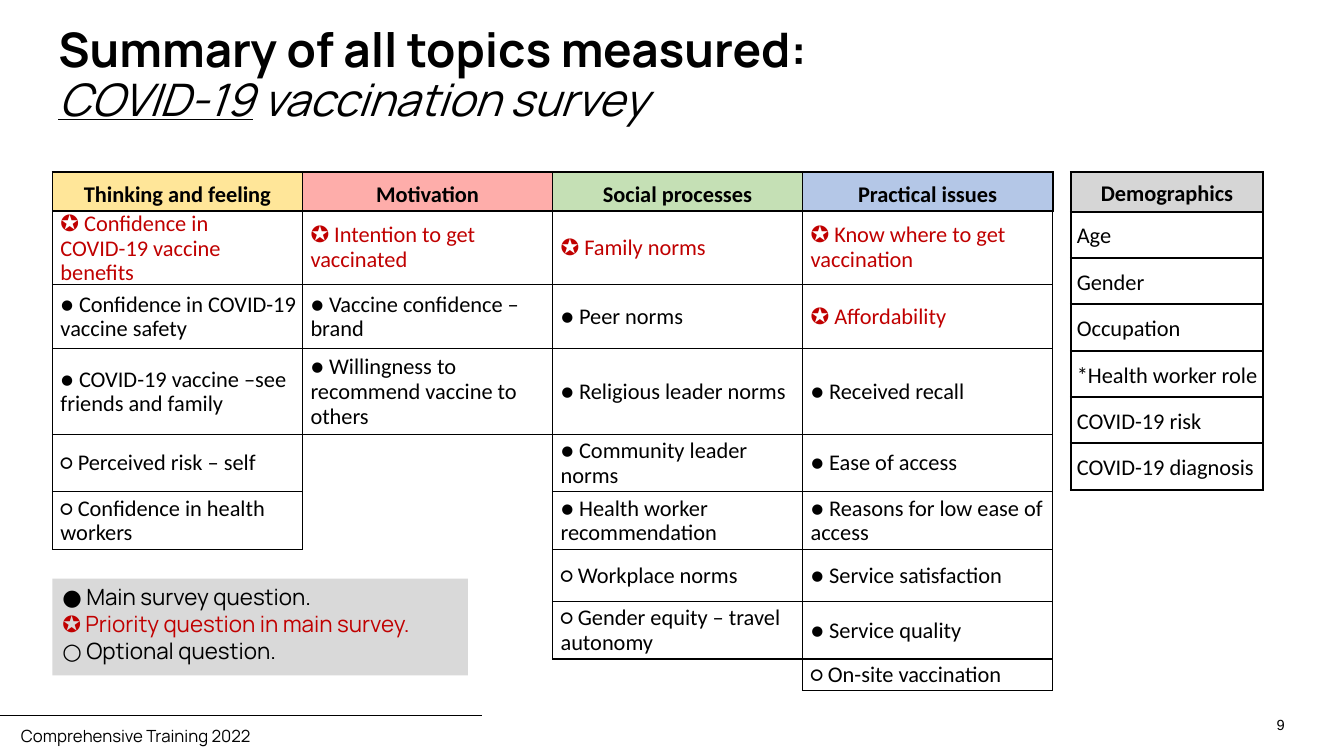
from lxml import etree
from pptx import Presentation
from pptx.dml.color import RGBColor
from pptx.enum import shapes, text
from pptx.oxml import ns
from pptx.util import Inches, Pt

BLACK, RED = "000000", "C00000"
CENTER = {"alignment": text.PP_ALIGN.CENTER, "line_spacing": 1.07}

TOPICS = {
    "Thinking and feeling": ("FFE699", [
        "✪ Confidence in COVID-19 vaccine benefits",
        "● Confidence in COVID-19 vaccine safety",
        "● COVID-19 vaccine –see friends and family",
        "○ Perceived risk – self",
        "○ Confidence in health workers"]),
    "Motivation": ("FEADAA", [
        "✪ Intention to get vaccinated",
        "● Vaccine confidence – brand",
        "● Willingness to recommend vaccine to others"]),
    "Social processes": ("C5E0B5", [
        "✪ Family norms",
        "● Peer norms",
        "● Religious leader norms",
        "● Community leader norms",
        "● Health worker recommendation",
        "○ Workplace norms",
        "○ Gender equity – travel autonomy"]),
    "Practical issues": ("B4C7E7", [
        "✪ Know where to get vaccination",
        "✪ Affordability",
        "● Received recall",
        "● Ease of access",
        "● Reasons for low ease of access",
        "● Service satisfaction",
        "● Service quality",
        "○ On-site vaccination"]),
}
DEMOGRAPHICS = {
    "Demographics": ("D6D6D6", [
        "Age", "Gender", "Occupation", "*Health worker role",
        "COVID-19 risk", "COVID-19 diagnosis"]),
}
LEGEND = ["● Main survey question.", "✪ Priority question in main survey.",
          "○ Optional question."]


def rgb(color):
    return RGBColor.from_string(color)


def apply(obj, values):
    for name, value in values.items():
        setattr(obj, name, value)


def mark_color(label):
    return RED if label.startswith("✪") else BLACK


def write(tf, runs, frame=None, para=None):
    apply(tf, {"word_wrap": True, **(frame or {})})
    p = tf.paragraphs[0]
    apply(p, {"alignment": text.PP_ALIGN.LEFT, **(para or {})})
    for i, (label, color, font) in enumerate(runs):
        if i and font.pop("new_line", False):
            p.add_line_break()
        r = p.add_run()
        r.text = label
        apply(r.font, font)
        r.font.color.rgb = rgb(color)
    return p


def add_text(s, box, runs, frame=None, para=None):
    sp = s.shapes.add_textbox(*map(Inches, box))
    write(sp.text_frame, runs, frame, para)


def add_legend(s, box):
    sp = s.shapes.add_shape(shapes.MSO_SHAPE.RECTANGLE, *map(Inches, box))
    sp.shadow.inherit = False
    sp.fill.solid()
    sp.fill.fore_color.rgb = rgb("D9D9D9")
    sp.line.fill.background()
    runs = [(label, mark_color(label),
             {"name": "Manrope", "size": Pt(16), "new_line": True})
            for label in LEGEND]
    write(sp.text_frame, runs, {"vertical_anchor": text.MSO_ANCHOR.TOP},
          {"space_after": Pt(12)})


def add_rule(s, x1, x2, y):
    line = s.shapes.add_connector(shapes.MSO_CONNECTOR.STRAIGHT,
                                  Inches(x1), Inches(y), Inches(x2), Inches(y))
    line.line.width = Pt(0.5)
    line.line.color.rgb = rgb(BLACK)
    etree.SubElement(line._element.spPr, ns.qn("a:effectLst"))


def set_border(cell, side, width):
    ln = etree.SubElement(cell._tc.get_or_add_tcPr(), ns.qn("a:ln" + side),
                          w=str(Pt(width)))
    if width:
        fill = etree.SubElement(ln, ns.qn("a:solidFill"))
        etree.SubElement(fill, ns.qn("a:srgbClr"), val=BLACK)
    else:
        etree.SubElement(ln, ns.qn("a:noFill"))


def add_table(s, x, y, width, heights, columns, margin, line, body):
    n_rows, n_cols = len(heights), len(columns)
    sp = s.shapes.add_table(n_rows, n_cols, Inches(x), Inches(y),
                            Inches(width * n_cols), Inches(sum(heights)))
    table = sp.table
    apply(table, {"first_row": False, "horz_banding": False})
    for row, height in zip(table.rows, heights):
        row.height = Inches(height)
    for col in table.columns:
        col.width = Inches(width)
    grid = [[head, *items] for head, (_, items) in columns.items()]
    fills = [fill for fill, _ in columns.values()]

    def weight(r, c):
        if not 0 <= c < n_cols or not 0 <= r < len(grid[c]):
            return 0
        return line if r else 1.5

    for c, labels in enumerate(grid):
        for r in range(n_rows):
            cell = table.cell(r, c)
            apply(cell, {"margin_left": Inches(margin),
                         "margin_right": Inches(margin),
                         "margin_top": Inches(0.01 if r else margin),
                         "margin_bottom": 0,
                         "vertical_anchor": text.MSO_ANCHOR.MIDDLE})
            for side, dr, dc in (("L", 0, -1), ("R", 0, 1),
                                 ("T", -1, 0), ("B", 1, 0)):
                set_border(cell, side, max(weight(r, c), weight(r + dr, c + dc)))
            if r:
                cell.fill.background()
            else:
                cell.fill.solid()
                cell.fill.fore_color.rgb = rgb(fills[c])
            label = labels[r] if r < len(labels) else ""
            font = {"name": "Calibri", "size": Pt(16), "bold": r == 0}
            runs = [(label, mark_color(label), font)] if label else []
            p = write(cell.text_frame, runs, para=body if r else CENTER)
            if r:
                p._p.get_or_add_pPr().set("marL", str(Inches(0.04)))


def main():
    prs = Presentation()
    apply(prs, {"slide_width": Inches(13.33), "slide_height": Inches(7.5)})
    s = prs.slides.add_slide(prs.slide_layouts[6])

    add_text(s, (11.95, 7.05, 0.89, 0.29),
             [("9", BLACK, {"name": "Arial", "size": Pt(10.5)})],
             para={"alignment": text.PP_ALIGN.RIGHT})
    add_text(s, (0.11, 7.15, 4.39, 0.3),
             [("Comprehensive Training 2022", BLACK,
               {"name": "Manrope", "size": Pt(12)})])
    add_rule(s, -0.06, 4.78, 7.1)

    subtitle = {"name": "Manrope", "size": Pt(32), "italic": True}
    add_text(s, (0.56, 0.4, 11.5, 0.85),
             [("Summary of all topics measured:", BLACK,
               {"name": "Manrope", "size": Pt(34), "bold": True}),
              ("COVID-19", BLACK,
               {**subtitle, "underline": True, "new_line": True}),
              (" vaccination survey", BLACK, subtitle)],
             {"vertical_anchor": text.MSO_ANCHOR.BOTTOM,
              "margin_left": Inches(0.02), "margin_right": Inches(0.39),
              "margin_top": 0, "margin_bottom": 0},
             {"line_spacing": 0.9})

    add_legend(s, (0.52, 5.74, 4.12, 0.96))
    add_table(s, 0.52, 1.71, 2.48,
              [0.38, 0.57, 0.64, 0.85, 0.57, 0.57, 0.52, 0.57, 0.31],
              TOPICS, 0.04, 1, {"line_spacing": 0.9})
    add_table(s, 10.62, 1.71, 1.91, [0.39] + [0.46] * 6,
              DEMOGRAPHICS, 0.02, 1.5,
              {"line_spacing": 1.07, "space_after": Pt(1)})
    prs.save("out.pptx")


if __name__ == "__main__":
    main()
